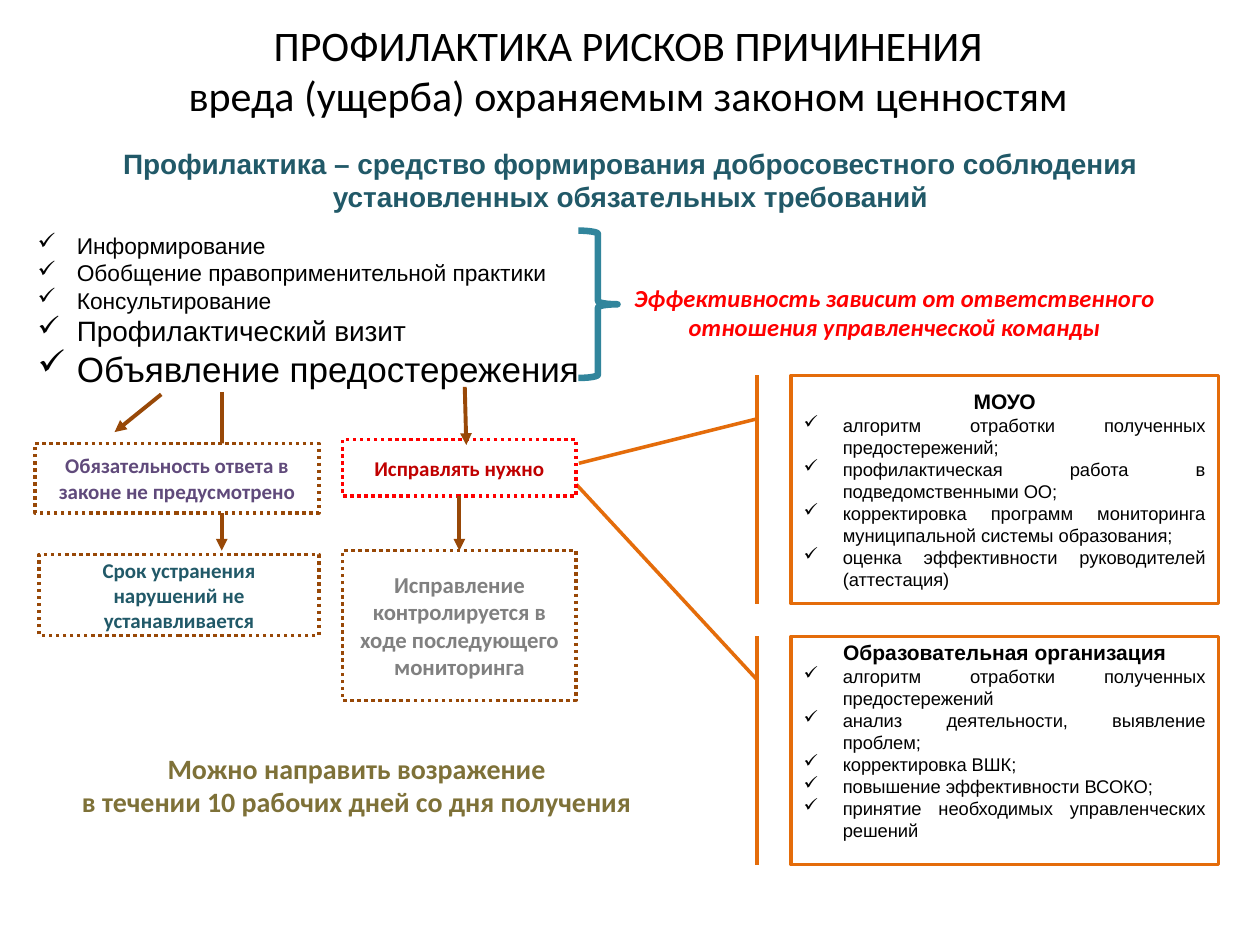
from lxml import etree
from pptx import Presentation
from pptx.dml.color import RGBColor
from pptx.enum.dml import MSO_LINE
from pptx.enum.shapes import MSO_CONNECTOR, MSO_SHAPE
from pptx.enum.text import MSO_ANCHOR, PP_ALIGN
from pptx.oxml.ns import qn
from pptx.util import Cm, Pt

RECTANGLE = MSO_SHAPE.RECTANGLE
RIGHT_BRACE = MSO_SHAPE.RIGHT_BRACE
CALLOUT = MSO_SHAPE.LINE_CALLOUT_1_BORDER_AND_ACCENT_BAR
STRAIGHT = MSO_CONNECTOR.STRAIGHT
DOTTED = MSO_LINE.ROUND_DOT
MIDDLE = MSO_ANCHOR.MIDDLE
CENTER = PP_ALIGN.CENTER
JUSTIFY = PP_ALIGN.JUSTIFY

WHITE = RGBColor(0xFF, 0xFF, 0xFF)
BLACK = RGBColor(0x00, 0x00, 0x00)
RED = RGBColor(0xFF, 0x00, 0x00)
DARK_RED = RGBColor(0xC0, 0x00, 0x00)
BROWN = RGBColor(0x98, 0x48, 0x07)
ORANGE = RGBColor(0xE4, 0x6C, 0x0A)
TEAL = RGBColor(0x31, 0x85, 0x9C)
DARK_TEAL = RGBColor(0x21, 0x59, 0x68)
PURPLE = RGBColor(0x60, 0x4A, 0x7B)
GRAY = RGBColor(0x80, 0x80, 0x80)
OLIVE = RGBColor(0x7E, 0x71, 0x38)

MEASURES = [
    ("Информирование", 13),
    ("Обобщение правоприменительной практики", 13),
    ("Консультирование", 13),
    ("Профилактический визит", 16),
    ("Объявление предостережения", 20),
]
AUTHORITY_TASKS = [
    "алгоритм отработки полученных предостережений;",
    "профилактическая работа в подведомственными ОО;",
    "корректировка программ мониторинга муниципальной системы образования;",
    "оценка эффективности руководителей (аттестация)",
]
SCHOOL_TASKS = [
    "алгоритм отработки полученных предостережений",
    "анализ деятельности, выявление проблем;",
    "корректировка ВШК;",
    "повышение эффективности ВСОКО;",
    "принятие необходимых управленческих решений",
]


def place(box, left, top, width, height):
    box.left, box.top = Cm(left), Cm(top)
    box.width, box.height = Cm(width), Cm(height)


def format_para(para, text, size, color, font="Calibri", bold=False, italic=False, align=CENTER):
    para.text = text
    para.alignment = align
    para.font.name = font
    para.font.size = Pt(size)
    para.font.color.rgb = color
    para.font.bold = bold
    para.font.italic = italic


def next_para(frame, index):
    return frame.add_paragraph() if index else frame.paragraphs[0]


def add_check(para, text, size):
    format_para(para, text, size, BLACK, "Arial", align=JUSTIFY)
    properties = para._p.get_or_add_pPr()
    properties.set("marL", str(Cm(0.79)))
    properties.set("indent", str(-Cm(0.79)))
    bullet = etree.Element(qn("a:buChar"), char="✓")
    properties.insert_element_before(bullet, "a:tabLst", "a:defRPr", "a:extLst")


def add_shape(slide, kind, area, fill=None, line=None, width=2.0):
    shape = slide.shapes.add_shape(kind, *map(Cm, area))
    shape.shadow.inherit = False
    if fill is None:
        shape.fill.background()
    else:
        shape.fill.solid()
        shape.fill.fore_color.rgb = fill
    if line is None:
        shape.line.fill.background()
    else:
        shape.line.color.rgb = line
        shape.line.width = Pt(width)
    shape.text_frame.word_wrap = True
    shape.text_frame.vertical_anchor = MIDDLE
    return shape


def add_label(slide, area, lines, size, color, border=None, font="Calibri", italic=False):
    label = add_shape(slide, RECTANGLE, area, WHITE, border)
    if border is not None:
        label.line.dash_style = DOTTED
    for index, text in enumerate(lines):
        para = next_para(label.text_frame, index)
        format_para(para, text, size, color, font, True, italic)
    return label


def add_arrow(slide, start=(0, 0), end=(0, 0)):
    arrow = slide.shapes.add_connector(STRAIGHT, *map(Cm, (*start, *end)))
    arrow.line.color.rgb = BROWN
    arrow.line.width = Pt(2.25)
    etree.SubElement(arrow.line._get_or_add_ln(), qn("a:tailEnd"), type="triangle")
    etree.SubElement(arrow._element.spPr, qn("a:effectLst"))
    return arrow


def add_callout(slide, top, heading, tasks, pointer, bottom_margin):
    callout = add_shape(slide, CALLOUT, (15.95, top, 8.61, 4.6), WHITE, ORANGE)
    for index, value in enumerate((0.19, -0.08, *pointer)):
        callout.adjustments[index] = value
    frame = callout.text_frame
    frame.margin_bottom = Cm(bottom_margin)
    format_para(frame.paragraphs[0], heading, 12, BLACK, "Arial", True)
    for task in tasks:
        add_check(frame.add_paragraph(), task, 10.5)


def add_title(slide):
    title = slide.shapes.title
    place(title, 0.41, 0.03, 24.51, 2.74)
    frame = title.text_frame
    frame.vertical_anchor = MIDDLE
    lines = ["ПРОФИЛАКТИКА РИСКОВ ПРИЧИНЕНИЯ", "вреда (ущерба) охраняемым законом ценностям"]
    for index, text in enumerate(lines):
        para = next_para(frame, index)
        format_para(para, text, 24, BLACK)
        para.space_before = Pt(0)


def add_measures(slide):
    box = slide.shapes.add_textbox(Cm(0.51), Cm(4.55), Cm(16), Cm(4.14))
    box.text_frame.word_wrap = True
    for index, (text, size) in enumerate(MEASURES):
        add_check(next_para(box.text_frame, index), text, size)


def main():
    deck = Presentation()
    deck.slide_width, deck.slide_height = Cm(25.4), Cm(19.05)
    slide = deck.slides.add_slide(deck.slide_layouts[5])

    add_title(slide)
    add_label(slide, (12.09, 5.38, 11.89, 1.83),
              ["Эффективность зависит от ответственного отношения управленческой команды"],
              14, RED, italic=True)
    add_arrow(slide, (4.47, 7.9), (4.47, 11.1))
    add_label(slide, (2.03, 2.97, 21.36, 1.32),
              ["Профилактика – средство формирования добросовестного соблюдения "
               "установленных обязательных требований"], 16, DARK_TEAL, font="Arial")
    add_measures(slide)
    add_shape(slide, RIGHT_BRACE, (11.66, 4.65, 0.79, 2.97), line=TEAL, width=3.75)

    add_callout(slide, 7.57, "МОУО", AUTHORITY_TASKS, (0.385, -0.497), 0.13)
    add_callout(slide, 12.83, "Образовательная организация", SCHOOL_TASKS, (-0.666, -0.503), 0.53)

    add_label(slide, (0.71, 8.94, 5.72, 1.4),
              ["Обязательность ответа в законе не предусмотрено"], 12, PURPLE, BROWN)
    add_arrow(slide, (3.25, 7.95), (2.31, 8.71))
    add_label(slide, (0.79, 11.18, 5.64, 1.63),
              ["Срок устранения нарушений не устанавливается"], 12, DARK_TEAL, BROWN)
    correction = add_label(slide, (6.91, 8.86, 4.7, 1.14), ["Исправлять нужно"], 12, DARK_RED, RED)
    add_arrow(slide, (9.37, 7.8), (9.4, 8.97))
    control = add_label(slide, (6.91, 11.1, 4.7, 3.02),
                        ["Исправление контролируется в ходе последующего мониторинга"],
                        13, GRAY, BROWN)
    control_arrow = add_arrow(slide)
    control_arrow.begin_connect(correction, 2)
    control_arrow.end_connect(control, 0)
    add_label(slide, (1.27, 14.91, 11.84, 1.83),
              ["Можно направить возражение", "в течении 10 рабочих дней со дня получения"],
              16, OLIVE)
    deck.save("out.pptx")


if __name__ == "__main__":
    main()
